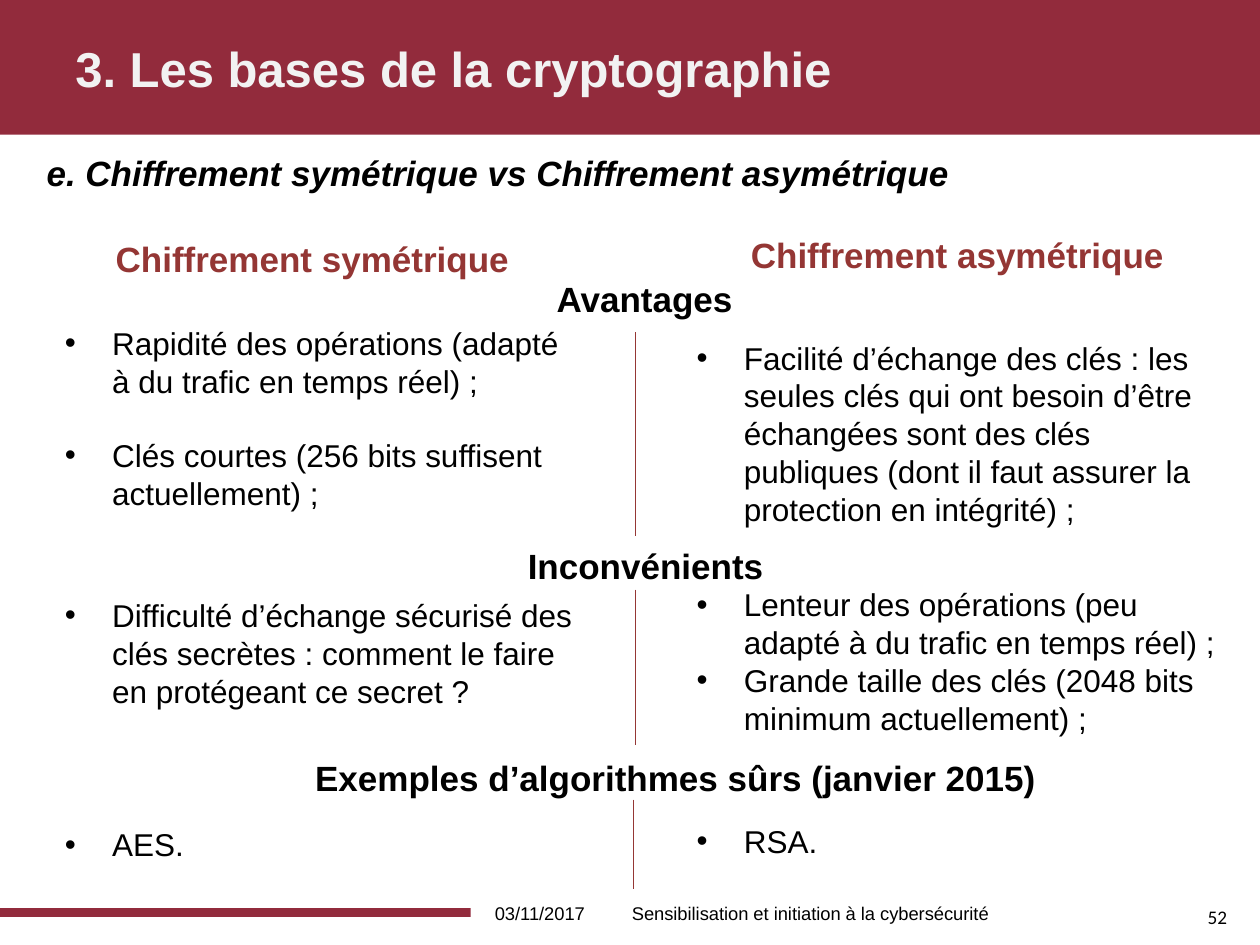
from collections import namedtuple
from dataclasses import dataclass

from lxml.etree import SubElement
from pptx import Presentation
from pptx.dml.color import RGBColor
from pptx.enum.shapes import MSO_CONNECTOR, MSO_SHAPE
from pptx.enum.text import MSO_ANCHOR, PP_ALIGN
from pptx.oxml.ns import qn
from pptx.util import Pt


@dataclass(frozen=True)
class Theme:
    font: str = "Arial"
    number_font: str = "Calibri"
    band: str = "922B3C"
    divider: str = "953735"
    accent: str = "943634"
    title: str = "F2F2F2"
    text: str = "000000"
    title_size: float = 28
    heading_size: float = 20
    body_size: float = 18
    number_size: float = 11
    footer_size: float = 10.5


THEME = Theme()
Box = namedtuple("Box", "left top width height")
Section = namedtuple("Section", "heading heading_box divider left right")
Points = namedtuple("Points", "top height items gap", defaults=(0,))

SECTIONS = [
    Section("Avantages", Box(311, 25, 119, 32), (363, 60, 176),
            Points(51.5, 117, ["Rapidité des opérations (adapté à du trafic en temps réel) ;",
                               "Clés courtes (256 bits suffisent actuellement) ;"], 21),
            Points(60, 117, ["Facilité d’échange des clés : les seules clés qui ont besoin "
                             "d’être échangées sont des clés publiques (dont il faut assurer "
                             "la protection en intégrité) ;"])),
    Section("Inconvénients", Box(294.5, 177.5, 154, 32), (363, 207, 295.5),
            Points(207, 73, ["Difficulté d’échange sécurisé des clés secrètes : comment "
                             "le faire en protégeant ce secret ?"]),
            Points(201, 94, ["Lenteur des opérations (peu adapté à du trafic en temps réel) ;",
                             "Grande taille des clés (2048 bits minimum actuellement) ;"])),
    Section("Exemples d’algorithmes sûrs (janvier 2015)", Box(173, 298.5, 441, 32),
            (362, 327, 378),
            Points(338, 29, ["AES."]),
            Points(336, 29, ["RSA."])),
]


def rgb(color):
    return RGBColor.from_string(color)


def inside(outer, part):
    """Turn a box measured from the corner of outer into a slide box."""
    return Box(outer.left + part.left, outer.top + part.top, part.width, part.height)


def add_band(s, box):
    sp = s.shapes.add_shape(MSO_SHAPE.RECTANGLE, *map(Pt, box))
    sp.shadow.inherit = False
    sp.fill.solid()
    sp.fill.fore_color.rgb = rgb(THEME.band)
    sp.line.fill.background()


def add_frame(s, box, wrap=True, anchor=MSO_ANCHOR.TOP):
    tf = s.shapes.add_textbox(*map(Pt, box)).text_frame
    tf.word_wrap = wrap
    tf.vertical_anchor = anchor
    return tf


def add_run(p, text, size, color=THEME.text, bold=None, italic=None, font=THEME.font):
    r = p.add_run()
    r.text = text
    r.font.name = font
    r.font.size = Pt(size)
    r.font.bold = bold
    r.font.italic = italic
    r.font.color.rgb = rgb(color)


def add_heading(s, box, text, color=THEME.text):
    tf = add_frame(s, box, wrap=False)
    add_run(tf.paragraphs[0], text, THEME.heading_size, color, bold=True)


def add_points(s, box, points):
    tf = add_frame(s, box)
    for i, item in enumerate(points.items):
        p = tf.add_paragraph() if i else tf.paragraphs[0]
        if i:
            p.space_before = Pt(points.gap)
        pPr = p._p.get_or_add_pPr()
        pPr.set("marL", str(Pt(27)))
        pPr.set("indent", str(-Pt(27)))
        SubElement(pPr, qn("a:buFont"), typeface=THEME.font)
        SubElement(pPr, qn("a:buChar"), char="•")
        add_run(p, item, THEME.body_size)


def add_divider(s, x, top, bottom):
    line = s.shapes.add_connector(MSO_CONNECTOR.STRAIGHT, Pt(x), Pt(top), Pt(x), Pt(bottom))
    line.line.color.rgb = rgb(THEME.divider)
    line.line.width = Pt(0.75)
    SubElement(line._element.spPr, qn("a:effectLst"))


def title_band(s, box, text):
    add_band(s, box)
    tf = add_frame(s, inside(box, Box(36, 0.5, box.width - 72, box.height - 1)),
                   anchor=MSO_ANCHOR.MIDDLE)
    add_run(tf.paragraphs[0], text, THEME.title_size, THEME.title, bold=True)


def subtitle(s, box, text):
    tf = add_frame(s, box)
    add_run(tf.paragraphs[0], text, THEME.heading_size, bold=True, italic=True)


def comparison(s, box):
    """Place two columns, split by a divider under each shared heading."""
    titles = [(Box(59, 2, 245, 32), "Chiffrement symétrique"),
              (Box(422, 0, 258, 32), "Chiffrement asymétrique")]
    for part, text in titles:
        add_heading(s, inside(box, part), text, THEME.accent)
    for section in SECTIONS:
        add_heading(s, inside(box, section.heading_box), section.heading)
        x, top, bottom = section.divider
        add_divider(s, box.left + x, box.top + top, box.top + bottom)
        for x, width, points in [(30, 309, section.left), (391, 315, section.right)]:
            add_points(s, inside(box, Box(x, points.top, width, points.height)), points)


def footer(s, box, date, text, number):
    add_band(s, inside(box, Box(0, 11.5, 269, 5)))
    labels = [(Box(269, 0, 79, 29), date, PP_ALIGN.CENTER),
              (Box(354, 0, 239, 29), text, PP_ALIGN.LEFT)]
    for part, label, align in labels:
        tf = add_frame(s, inside(box, part), anchor=MSO_ANCHOR.MIDDLE)
        tf.paragraphs[0].alignment = align
        add_run(tf.paragraphs[0], label, THEME.footer_size)
    tf = add_frame(s, inside(box, Box(683, 6.5, 33, 21)), wrap=False)
    add_run(tf.paragraphs[0], number, THEME.number_size, font=THEME.number_font)


def main():
    prs = Presentation()
    prs.slide_width, prs.slide_height = Pt(720), Pt(540)
    s = prs.slides.add_slide(prs.slide_layouts[6])
    title_band(s, Box(0, 0, 720, 77), "3. Les bases de la cryptographie")
    subtitle(s, Box(19.5, 83, 686, 45), "e. Chiffrement symétrique vs Chiffrement asymétrique")
    comparison(s, Box(0, 130, 720, 378))
    footer(s, Box(0, 507.5, 720, 29), "03/11/2017",
           "Sensibilisation et initiation à la cybersécurité", "52")
    prs.save("out.pptx")


if __name__ == "__main__":
    main()
